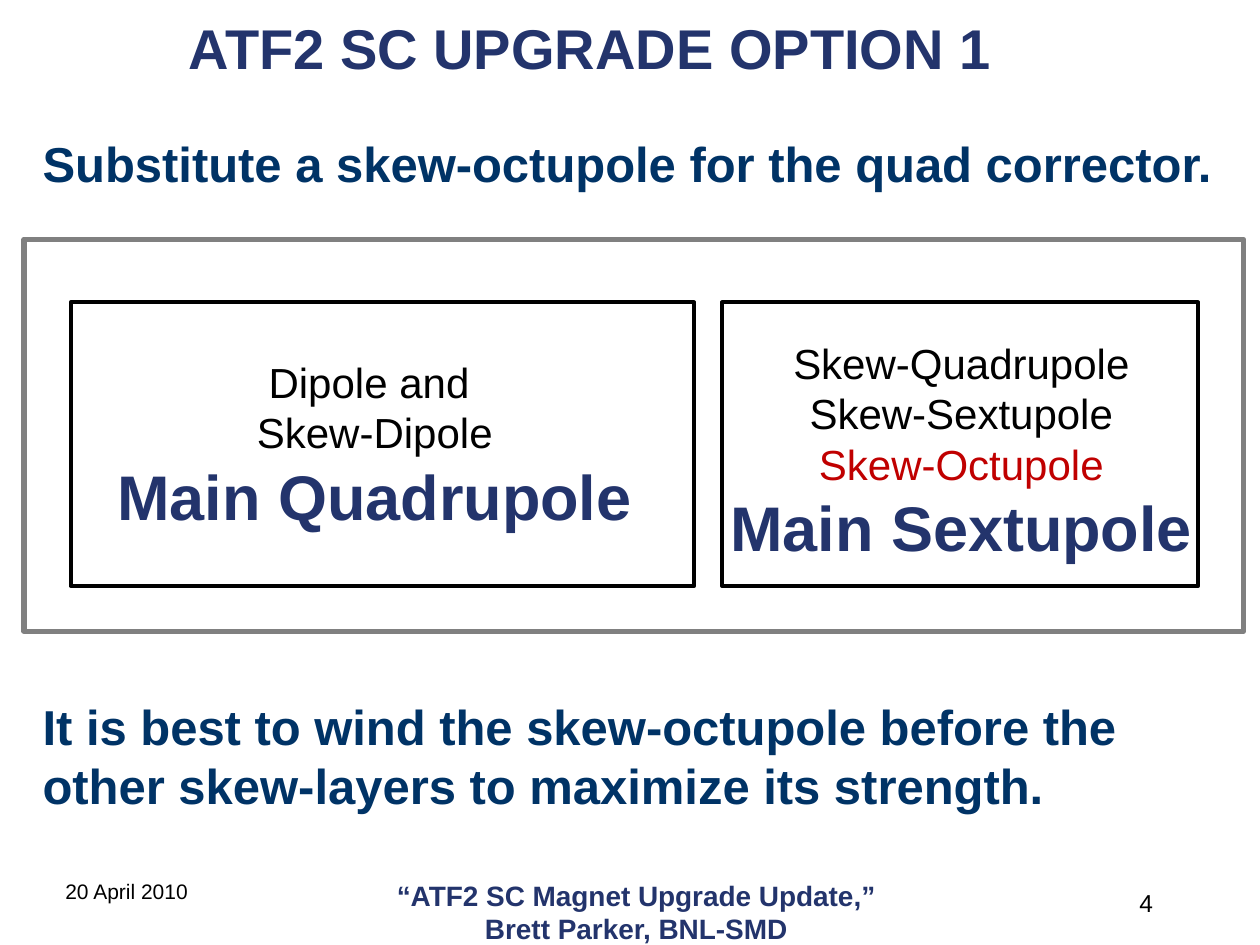
import pptx
import pptx.dml.color
import pptx.enum.shapes
import pptx.enum.text
import pptx.util
from dataclasses import dataclass

Inches = pptx.util.Inches
Align = pptx.enum.text.PP_ALIGN
Anchor = pptx.enum.text.MSO_ANCHOR
AutoSize = pptx.enum.text.MSO_AUTO_SIZE


@dataclass(frozen=True)
class Theme:
    font: str = "Arial"
    black: str = "000000"
    navy: str = "23346C"
    blue: str = "003366"
    red: str = "C00000"
    gray: str = "808080"
    title: int = 32
    statement: int = 28
    magnet: int = 36
    layer: int = 24
    footer: int = 16
    number: int = 14
    date: int = 12


class SlideBuilder:
    def __init__(self, slide, theme):
        self.slide = slide
        self.theme = theme

    def text(self, box, lines, align=Align.LEFT, **frame_format):
        shape = self.slide.shapes.add_textbox(*map(Inches, box))
        frame = shape.text_frame
        frame_values = {"word_wrap": True, "auto_size": AutoSize.NONE} | frame_format
        for name, value in frame_values.items():
            setattr(frame, name, value)
        for index, (text, size, color, bold) in enumerate(lines):
            paragraph = frame.add_paragraph() if index else frame.paragraphs[0]
            paragraph.alignment = align
            run = paragraph.add_run()
            run.text = text
            font_values = {"name": self.theme.font, "size": pptx.util.Pt(size), "bold": bold}
            for name, value in font_values.items():
                setattr(run.font, name, value)
            run.font.color.rgb = pptx.dml.color.RGBColor.from_string(color)

    def statement(self, top, height, text):
        line = (text, self.theme.statement, self.theme.blue, True)
        self.text((0.24, top, 9.53, height), [line], auto_size=AutoSize.SHAPE_TO_FIT_TEXT)

    def magnet_label(self, box, layers, magnet):
        theme = self.theme
        lines = [(text, theme.layer, color, False) for text, color in layers]
        lines.append((magnet, theme.magnet, theme.navy, True))
        self.text(box, lines, Align.CENTER, word_wrap=False,
                  auto_size=AutoSize.SHAPE_TO_FIT_TEXT)

    def outline(self, box, color, width):
        shape = self.slide.shapes.add_shape(
            pptx.enum.shapes.MSO_SHAPE.RECTANGLE, *map(Inches, box))
        shape.shadow.inherit = False
        shape.fill.background()
        shape.line.color.rgb = pptx.dml.color.RGBColor.from_string(color)
        shape.line.width = pptx.util.Pt(width)


def main():
    presentation = pptx.Presentation()
    presentation.slide_width = Inches(10)
    presentation.slide_height = Inches(7.5)
    slide = presentation.slides.add_slide(presentation.slide_layouts[6])
    theme = Theme()
    builder = SlideBuilder(slide, theme)

    builder.text((0.42, 6.92, 2.25, 0.5),
                 [("20 April 2010", theme.date, theme.black, False)])
    builder.text((2.8, 6.92, 4.5, 0.5),
                 [("“ATF2 SC Magnet Upgrade Update,” Brett Parker, BNL-SMD",
                   theme.footer, theme.navy, True)], Align.CENTER)
    builder.text((7.42, 7, 1.83, 0.5),
                 [("4", theme.number, theme.black, False)], Align.RIGHT)

    builder.magnet_label((0.81, 2.78, 4.33, 1.51),
                         [("Dipole and ", theme.black), ("Skew-Dipole", theme.black)],
                         "Main Quadrupole")
    builder.magnet_label((5.68, 2.63, 3.9, 1.92),
                         [("Skew-Quadrupole", theme.black),
                          ("Skew-Sextupole", theme.black),
                          ("Skew-Octupole", theme.red)],
                         "Main Sextupole")
    for left, width in ((0.56, 4.95), (5.73, 3.78)):
        builder.outline((left, 2.4, width, 2.25), theme.black, 2.25)
    builder.outline((0.19, 1.9, 9.68, 3.11), theme.gray, 3)

    builder.text((1.4, 0, 8.58, 0.75),
                 [("ATF2 SC UPGRADE OPTION 1", theme.title, theme.navy, True)],
                 vertical_anchor=Anchor.MIDDLE)
    builder.statement(1.01, 0.57, "Substitute a skew-octupole for the quad corrector.")
    builder.statement(5.48, 1.04, "It is best to wind the skew-octupole before the "
                                  "other skew-layers to maximize its strength.")

    presentation.save("out.pptx")


if __name__ == "__main__":
    main()
